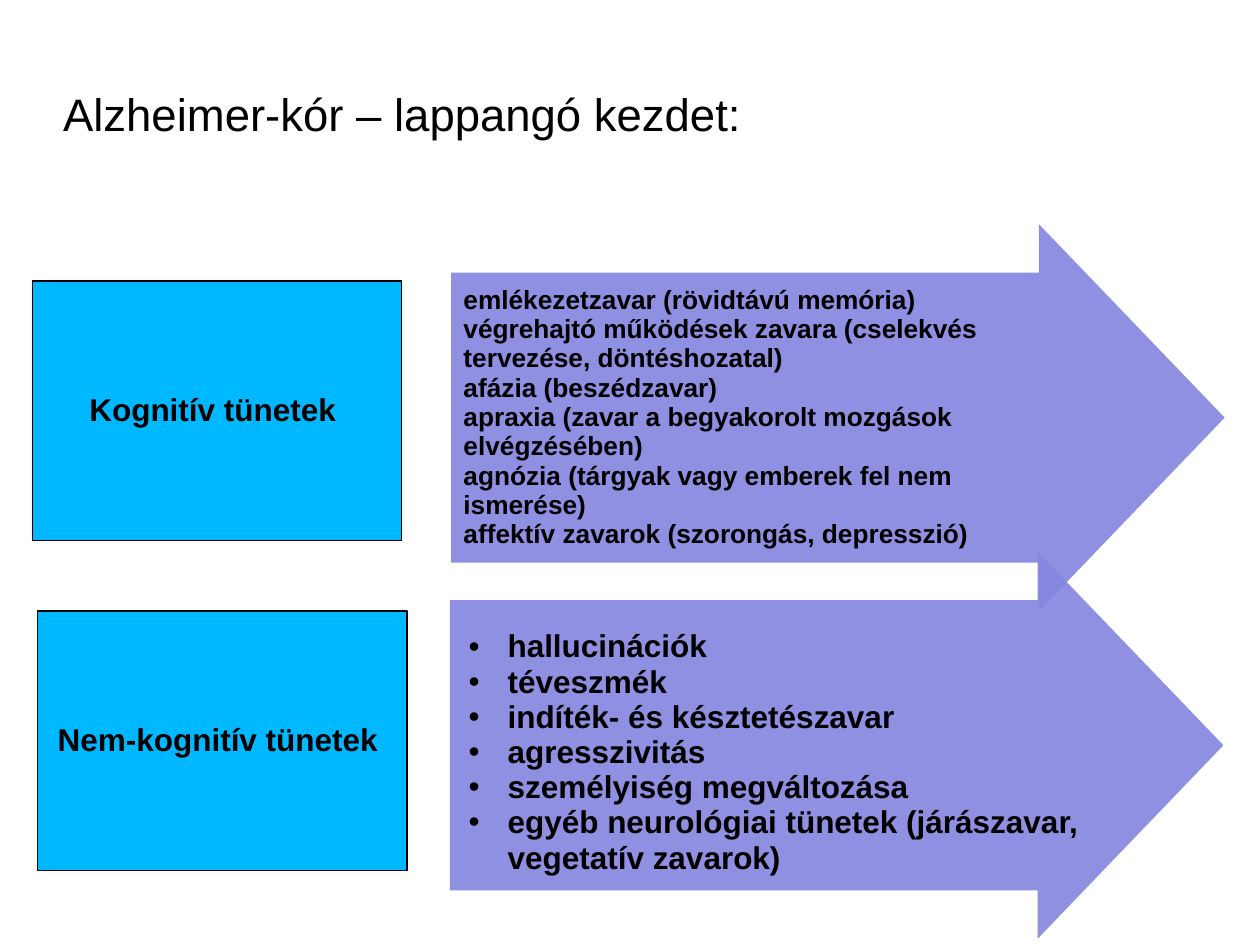
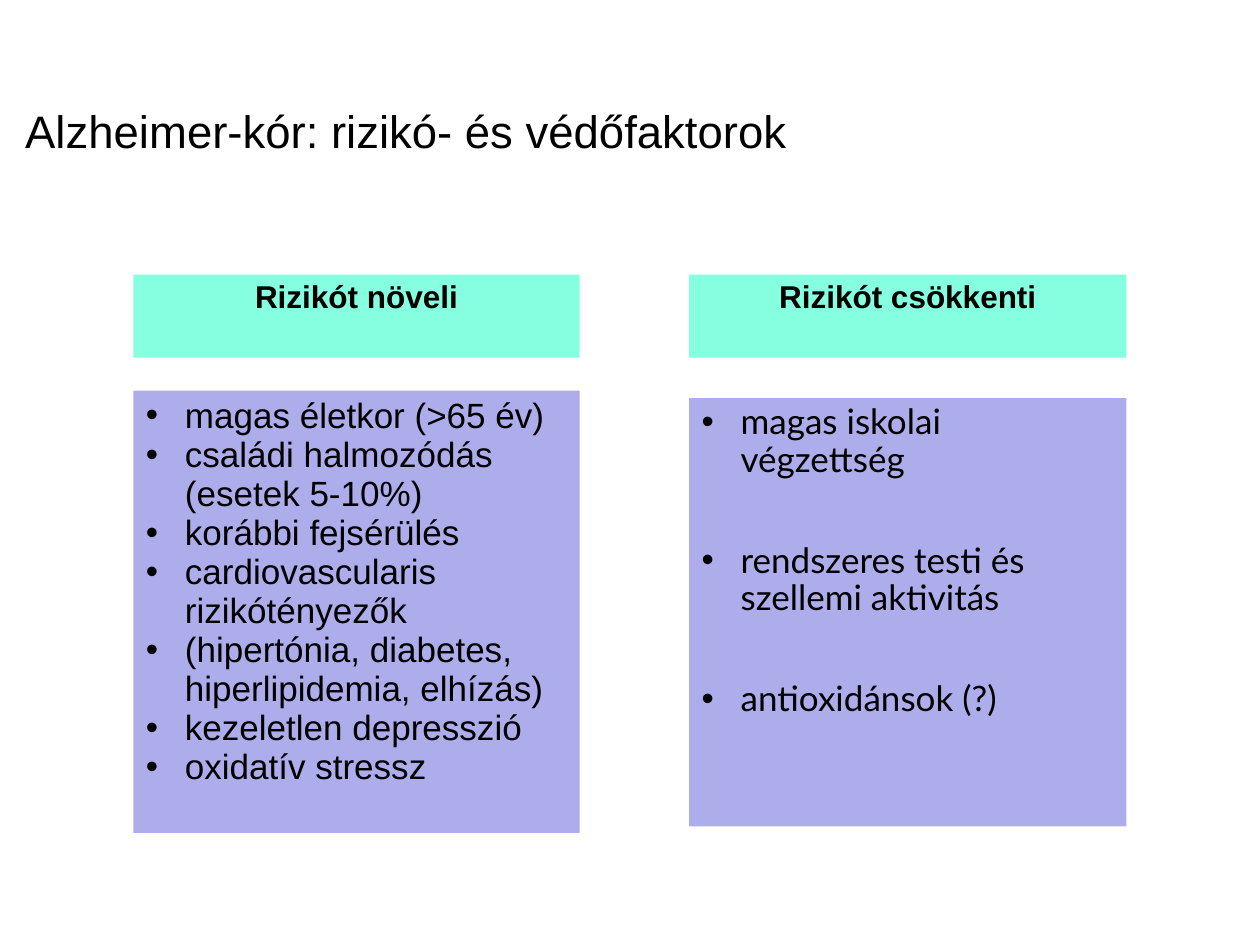
from dataclasses import dataclass

from lxml import etree
from pptx import Presentation
from pptx import util as u
from pptx.dml.color import RGBColor
from pptx.enum import shapes, text
from pptx.oxml import ns


@dataclass(frozen=True)
class Theme:
    ink: str = "000000"
    label: str = "00B8FF"
    arrow: str = "8585E0"
    header: str = "85FFE0"
    panel: str = "ADADEB"
    font: str = "Arial"
    panel_font: str = "Lato"
    title_size: int = 26
    panel_size: int = 20
    label_size: int = 18
    detail_size: int = 15
    line_spacing: float = 0.93
    indent: float = 0.31
    arrow_opacity: int = 90


THEME = Theme()
LEFT, CENTER = text.PP_ALIGN.LEFT, text.PP_ALIGN.CENTER
TOP, MIDDLE = text.MSO_ANCHOR.TOP, text.MSO_ANCHOR.MIDDLE


def inches(box):
    return [u.Inches(length) for length in box]


def add_bullet(paragraph):
    properties = paragraph._p.get_or_add_pPr()
    properties.set("marL", str(u.Inches(THEME.indent)))
    properties.set("indent", str(-u.Inches(THEME.indent)))
    color = etree.SubElement(properties, ns.qn("a:buClr"))
    etree.SubElement(color, ns.qn("a:srgbClr"), val=THEME.ink)
    etree.SubElement(properties, ns.qn("a:buFont"), typeface=THEME.font)
    etree.SubElement(properties, ns.qn("a:buChar"), char="•")


def write(shape, lines, size, bold=False, align=LEFT, anchor=TOP, bullets=False,
          font=THEME.font, spacing=THEME.line_spacing, gap=0,
          insets=(0.1, 0.05, 0.1, 0.05)):
    frame = shape.text_frame
    frame.text = "\n".join(lines)
    frame.word_wrap = True
    frame.auto_size = text.MSO_AUTO_SIZE.NONE
    frame.vertical_anchor = anchor
    (frame.margin_left, frame.margin_top,
     frame.margin_right, frame.margin_bottom) = inches(insets)
    for index, paragraph in enumerate(frame.paragraphs):
        paragraph.alignment = align
        paragraph.line_spacing = spacing
        paragraph.space_before = u.Pt(gap if index else 0)
        paragraph.space_after = u.Pt(0)
        if bullets:
            add_bullet(paragraph)
        for run in paragraph.runs:
            run.font.name = font
            run.font.size = u.Pt(size)
            run.font.bold = bold
            run.font.color.rgb = RGBColor.from_string(THEME.ink)


def add_block(slide, kind, box, fill, outlined=False):
    shape = slide.shapes.add_shape(kind, *inches(box))
    shape.shadow.inherit = False
    shape.fill.solid()
    shape.fill.fore_color.rgb = RGBColor.from_string(fill)
    if outlined:
        shape.line.color.rgb = RGBColor.from_string(THEME.ink)
        shape.line.width = u.Pt(0.75)
    else:
        shape.line.fill.background()
    return shape


def add_titled_slide(presentation, title, left, top):
    slide = presentation.slides.add_slide(presentation.slide_layouts[5])
    shape = slide.shapes.title
    shape.left, shape.top, shape.width, shape.height = inches((left, top, 8.99, 1.24))
    write(shape, [title], THEME.title_size, anchor=MIDDLE, insets=(0, 0, 0, 0))
    return slide


def add_label(slide, left, top, caption):
    label = add_block(slide, shapes.MSO_SHAPE.RECTANGLE, (left, top, 2.93, 2.06),
                      THEME.label, outlined=True)
    write(label, [caption], THEME.label_size, bold=True, align=CENTER,
          anchor=MIDDLE, insets=(0.1, 0.05, 0.17, 0.05))


def add_symptom_arrow(slide, left, top, text_box, symptoms, size, bullets=False):
    arrow = add_block(slide, shapes.MSO_SHAPE.RIGHT_ARROW, (left, top, 6.14, 3.07),
                      THEME.arrow)
    arrow.adjustments[0] = 0.75
    arrow.adjustments[1] = 0.48
    color = arrow._element.spPr.find(ns.qn("a:solidFill"))[0]
    etree.SubElement(color, ns.qn("a:alpha"), val=str(THEME.arrow_opacity * 1000))
    dx, dy, width, height = text_box
    box = slide.shapes.add_textbox(*inches((left + dx, top + dy, width, height)))
    write(box, symptoms, size, bold=True, bullets=bullets)


def add_factor_column(slide, left, width, caption, factors, panel_top, panel_height,
                      **style):
    rectangle = shapes.MSO_SHAPE.RECTANGLE
    panel = add_block(slide, rectangle, (left, panel_top, width, panel_height),
                      THEME.panel)
    write(panel, factors, THEME.panel_size, bullets=True,
          insets=(0.1, 0.05, 0.15, 0.05), **style)
    header = add_block(slide, rectangle, (left, 2.18, width, 0.66), THEME.header)
    write(header, [caption], THEME.label_size, bold=True, align=CENTER)


def build_onset_slide(presentation):
    slide = add_titled_slide(presentation, "Alzheimer-kór – lappangó kezdet:", 0.5, 0.3)
    add_label(slide, 0.26, 2.23, "Kognitív tünetek")
    add_label(slide, 0.3, 4.85, "Nem-kognitív tünetek")
    add_symptom_arrow(slide, 3.58, 1.78, (0, 0.44, 4.85, 2.19), [
        "emlékezetzavar (rövidtávú memória)",
        "végrehajtó működések zavara (cselekvés tervezése, döntéshozatal)",
        "afázia (beszédzavar)",
        "apraxia (zavar a begyakorolt mozgások elvégzésében)",
        "agnózia (tárgyak vagy emberek fel nem ismerése)",
        "affektív zavarok (szorongás, depresszió)",
    ], THEME.detail_size)
    add_symptom_arrow(slide, 3.57, 4.38, (0.05, 0.57, 5.09, 2.1), [
        "hallucinációk",
        "téveszmék",
        "indíték- és késztetészavar",
        "agresszivitás",
        "személyiség megváltozása",
        "egyéb neurológiai tünetek (járászavar, vegetatív zavarok)",
    ], THEME.label_size, bullets=True)


def build_factors_slide(presentation):
    slide = add_titled_slide(presentation, "Alzheimer-kór: rizikó- és védőfaktorok",
                             0.2, 0.44)
    add_factor_column(slide, 5.47, 3.47, "Rizikót csökkenti", [
        "magas iskolai végzettség",
        "rendszeres testi és szellemi aktivitás",
        "antioxidánsok (?)",
    ], 3.16, 3.4, font=THEME.panel_font, spacing=0.9, gap=36)
    add_factor_column(slide, 1.06, 3.54, "Rizikót növeli", [
        "magas életkor (>65 év)",
        "családi halmozódás (esetek 5-10%)",
        "korábbi fejsérülés",
        "cardiovascularis rizikótényezők",
        "(hipertónia, diabetes, hiperlipidemia, elhízás)",
        "kezeletlen depresszió",
        "oxidatív stressz",
    ], 3.1, 3.51)


def main():
    presentation = Presentation()
    presentation.slide_width = u.Inches(10)
    presentation.slide_height = u.Inches(7.5)
    build_onset_slide(presentation)
    build_factors_slide(presentation)
    presentation.save("out.pptx")


if __name__ == "__main__":
    main()
